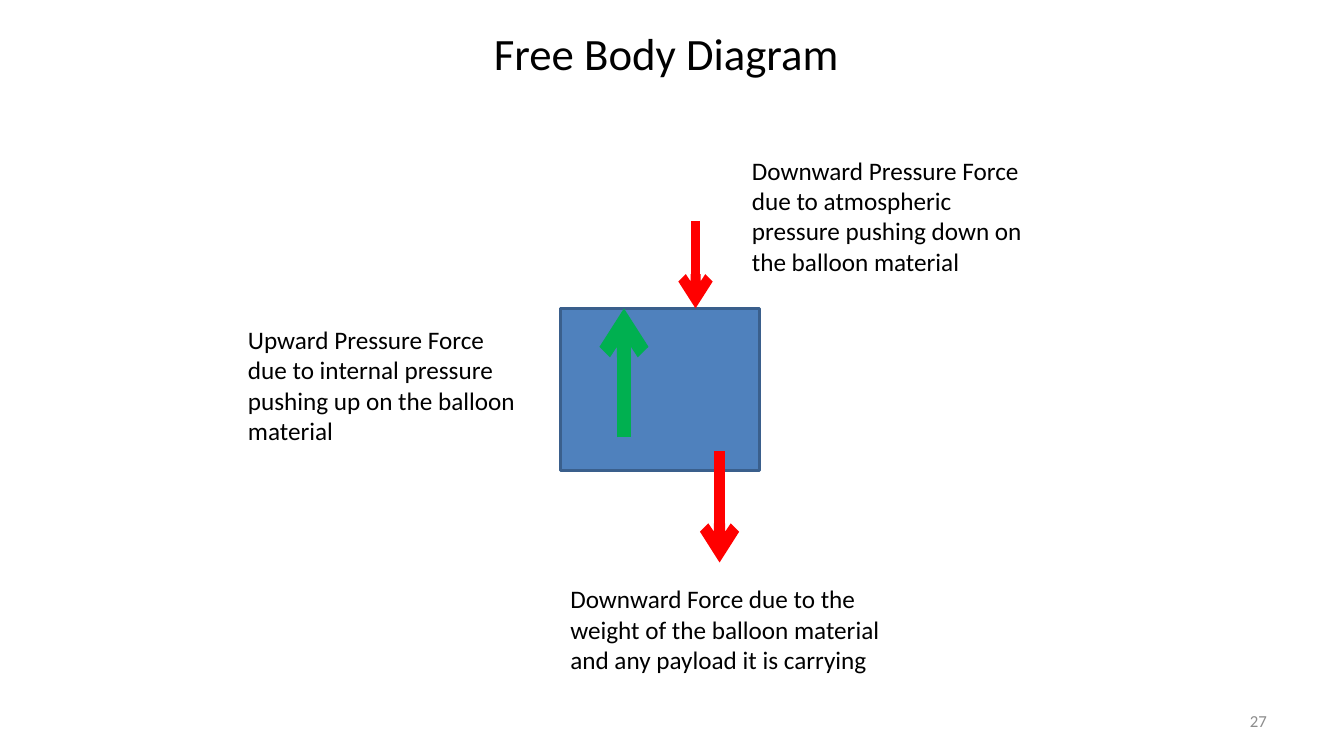
"""Builds a slide with the free body diagram of a balloon."""
from lxml.etree import SubElement
from pptx import Presentation
from pptx.dml.color import RGBColor
from pptx.enum.shapes import MSO_CONNECTOR as Connector, MSO_SHAPE as Shape
from pptx.enum.text import MSO_ANCHOR as Anchor, PP_ALIGN as Align
from pptx.oxml.ns import qn
from pptx.util import Pt

BLACK = RGBColor(0x00, 0x00, 0x00)
GRAY = RGBColor(0x8C, 0x8C, 0x8C)
BLUE = RGBColor(0x4F, 0x81, 0xBD)
DARK_BLUE = RGBColor(0x3A, 0x5F, 0x8C)
GREEN = RGBColor(0x00, 0xB0, 0x50)
RED = RGBColor(0xFF, 0x00, 0x00)


class Diagram:
    font = "Calibri"

    def __init__(self, slide):
        self.shapes = slide.shapes

    def text(self, words, left, top, width, height, *, size=18, color=BLACK,
             align=Align.LEFT, anchor=Anchor.TOP):
        frame = self.shapes.add_textbox(Pt(left), Pt(top), Pt(width), Pt(height)).text_frame
        frame.word_wrap = True
        frame.vertical_anchor = anchor
        paragraph = frame.paragraphs[0]
        paragraph.text = words
        paragraph.alignment = align
        paragraph.font.name = self.font
        paragraph.font.size = Pt(size)
        paragraph.font.color.rgb = color

    def body(self, left, top, width, height):
        balloon = self.shapes.add_shape(Shape.RECTANGLE, Pt(left), Pt(top), Pt(width), Pt(height))
        balloon.shadow.inherit = False
        balloon.fill.solid()
        balloon.fill.fore_color.rgb = BLUE
        balloon.line.color.rgb = DARK_BLUE
        balloon.line.width = Pt(2)

    def force(self, x, start, tip, color, weight):
        arrow = self.shapes.add_connector(Connector.STRAIGHT, Pt(x), Pt(start), Pt(x), Pt(tip))
        arrow.line.color.rgb = color
        arrow.line.width = Pt(weight)
        properties = arrow._element.spPr
        SubElement(properties.find(qn("a:ln")), qn("a:tailEnd"), type="arrow")
        SubElement(properties, qn("a:effectLst"))


def main():
    deck = Presentation()
    deck.slide_width, deck.slide_height = Pt(960), Pt(540)
    diagram = Diagram(deck.slides.add_slide(deck.slide_layouts[6]))

    diagram.text("Free Body Diagram", 168.5, 15, 615, 46, size=32, align=Align.CENTER)
    diagram.text("27", 688, 500.4, 224, 29, size=12, color=GRAY,
                 align=Align.RIGHT, anchor=Anchor.MIDDLE)

    balloon_top = 220.3
    diagram.body(400.3, balloon_top, 142, 116)
    diagram.force(445.7, 312.5, balloon_top, GREEN, 10)
    diagram.force(514, 322.5, 401.8, RED, 8)
    diagram.force(496.8, 157.7, balloon_top, RED, 7)

    diagram.text("Upward Pressure Force due to internal pressure pushing up on "
                 "the balloon material", 170, 228.2, 212, 94.5)
    diagram.text("Downward Force due to the weight of the balloon material and any "
                 "payload it is carrying", 400.3, 413.3, 263.5, 72.7)
    diagram.text("Downward Pressure Force due to atmospheric pressure pushing down on "
                 "the balloon material", 530, 107.3, 212, 94.5)

    deck.save("out.pptx")


if __name__ == "__main__":
    main()
